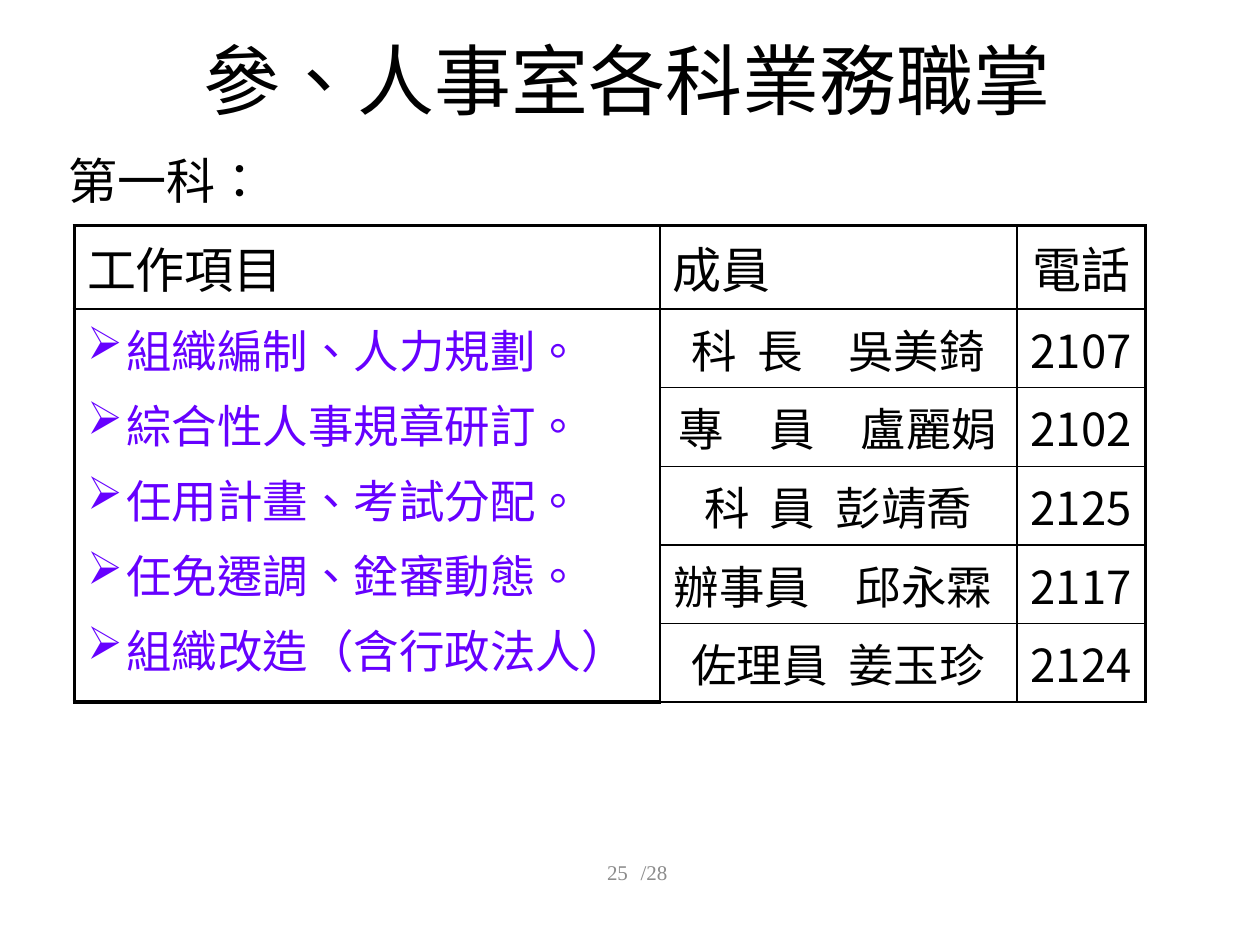
from dataclasses import dataclass

from lxml import etree
from pptx import Presentation
from pptx.dml.color import RGBColor
from pptx.enum import text as t
from pptx.oxml import ns
from pptx.util import Cm, Pt


@dataclass(frozen=True)
class Theme:
    ink: str = "000000"
    duty: str = "6600FF"
    muted: str = "8C8C8C"
    sans: str = "Noto Sans CJK SC"
    serif: str = "Times New Roman"
    title: int = 44
    heading: int = 28
    body: int = 26
    footer: int = 12
    thick: float = 2.25
    thin: float = 1


THEME = Theme()
ALIGN = t.PP_ALIGN
HEADERS = [("工作項目", ALIGN.JUSTIFY), ("成員", ALIGN.JUSTIFY), ("電話", ALIGN.CENTER)]
DUTIES = ["組織編制、人力規劃。", "綜合性人事規章研訂。", "任用計畫、考試分配。",
          "任免遷調、銓審動態。", "組織改造（含行政法人）"]
MEMBERS = [("科  長　吳美錡", "2107"), ("專　員　盧麗娟", "2102"),
           ("科  員  彭靖喬", "2125"), ("辦事員　邱永霖  ", "2117"),
           ("佐理員  姜玉珍", "2124")]
COLUMN_WIDTHS = [11.8, 7.2, 2.59]
HEADER_HEIGHT, MEMBER_HEIGHT = 1.45, 1.35


def add_bullet(paragraph, mark, indent):
    props = paragraph._p.get_or_add_pPr()
    props.set("marL", str(indent))
    props.set("indent", str(-indent))
    etree.SubElement(props, ns.qn("a:buChar")).set("char", mark)


def write_text(frame, lines, size=THEME.body, color=THEME.ink, font=THEME.sans,
               align=ALIGN.LEFT, gap=0, bullet=None):
    frame.word_wrap = True
    frame.vertical_anchor = t.MSO_ANCHOR.MIDDLE
    for index, line in enumerate(lines):
        paragraph = frame.add_paragraph() if index else frame.paragraphs[0]
        paragraph.alignment = align
        paragraph.space_before = Pt(gap if index else 0)
        if bullet:
            add_bullet(paragraph, bullet, Cm(0.79))
        run = paragraph.add_run()
        run.text = line
        run.font.size = Pt(size)
        run.font.name = font
        run.font.color.rgb = RGBColor.from_string(color)
        props = run._r.get_or_add_rPr()
        props.set("lang", "zh-TW")
        east_asian = etree.SubElement(props, ns.qn("a:ea"))
        east_asian.set("typeface", THEME.sans)


def add_label(slide, label, left, top, width, height, **style):
    box = slide.shapes.add_textbox(Cm(left), Cm(top), Cm(width), Cm(height))
    write_text(box.text_frame, [label], **style)


def add_title(slide, heading):
    title = slide.shapes.title
    title.left, title.top, title.width, title.height = Cm(1.85), Cm(0), Cm(21.59), Cm(3.18)
    write_text(title.text_frame, [heading], size=THEME.title, align=ALIGN.CENTER)


def draw_borders(cell, thick_sides):
    props = cell._tc.get_or_add_tcPr()
    for position, side in enumerate("LRTB"):
        weight = THEME.thick if side in thick_sides else THEME.thin
        line = etree.Element(ns.qn(f"a:ln{side}"), w=str(Pt(weight)))
        fill = etree.SubElement(line, ns.qn("a:solidFill"))
        etree.SubElement(fill, ns.qn("a:srgbClr")).set("val", THEME.ink)
        props.insert(position, line)


def fill_cell(cell, lines, thick_sides, **style):
    write_text(cell.text_frame, lines, **style)
    cell.vertical_anchor = t.MSO_ANCHOR.TOP
    cell.fill.background()
    draw_borders(cell, thick_sides)


def add_duty_table(slide):
    heights = [HEADER_HEIGHT] + [MEMBER_HEIGHT] * len(MEMBERS)
    table = slide.shapes.add_table(
        len(heights), len(COLUMN_WIDTHS), Cm(1.5), Cm(4.55),
        Cm(sum(COLUMN_WIDTHS)), Cm(sum(heights))).table
    table.first_row = table.horz_banding = False
    for column, width in zip(table.columns, COLUMN_WIDTHS):
        column.width = Cm(width)
    for row, height in zip(table.rows, heights):
        row.height = Cm(height)

    for index, ((header, align), sides) in enumerate(zip(HEADERS, ("LT", "T", "TR"))):
        fill_cell(table.cell(0, index), [header], sides, size=THEME.heading, align=align)

    duties = table.cell(1, 0)
    duties.merge(table.cell(len(MEMBERS), 0))
    fill_cell(duties, DUTIES, "LB", color=THEME.duty, align=ALIGN.JUSTIFY,
              gap=THEME.body * 0.2, bullet="➢")

    for row, (member, phone) in enumerate(MEMBERS, start=1):
        fill_cell(table.cell(row, 1), [member], "", align=ALIGN.CENTER)
        fill_cell(table.cell(row, 2), [phone], "R", align=ALIGN.CENTER)


def main():
    deck = Presentation()
    deck.slide_width, deck.slide_height = Cm(25.4), Cm(19.05)
    slide = deck.slides.add_slide(deck.slide_layouts[5])
    add_title(slide, "參、人事室各科業務職掌")
    add_duty_table(slide)
    add_label(slide, "第一科：", 1.14, 3.23, 21.59, 0.81,
              size=THEME.heading, font=THEME.serif)
    footer = dict(size=THEME.footer, color=THEME.muted, font=THEME.serif)
    add_label(slide, "25", 7.19, 17.07, 5.72, 1.02, align=ALIGN.RIGHT, **footer)
    add_label(slide, "/28", 8.89, 17.07, 8.59, 1.02, align=ALIGN.CENTER, **footer)
    deck.save("out.pptx")


if __name__ == "__main__":
    main()
